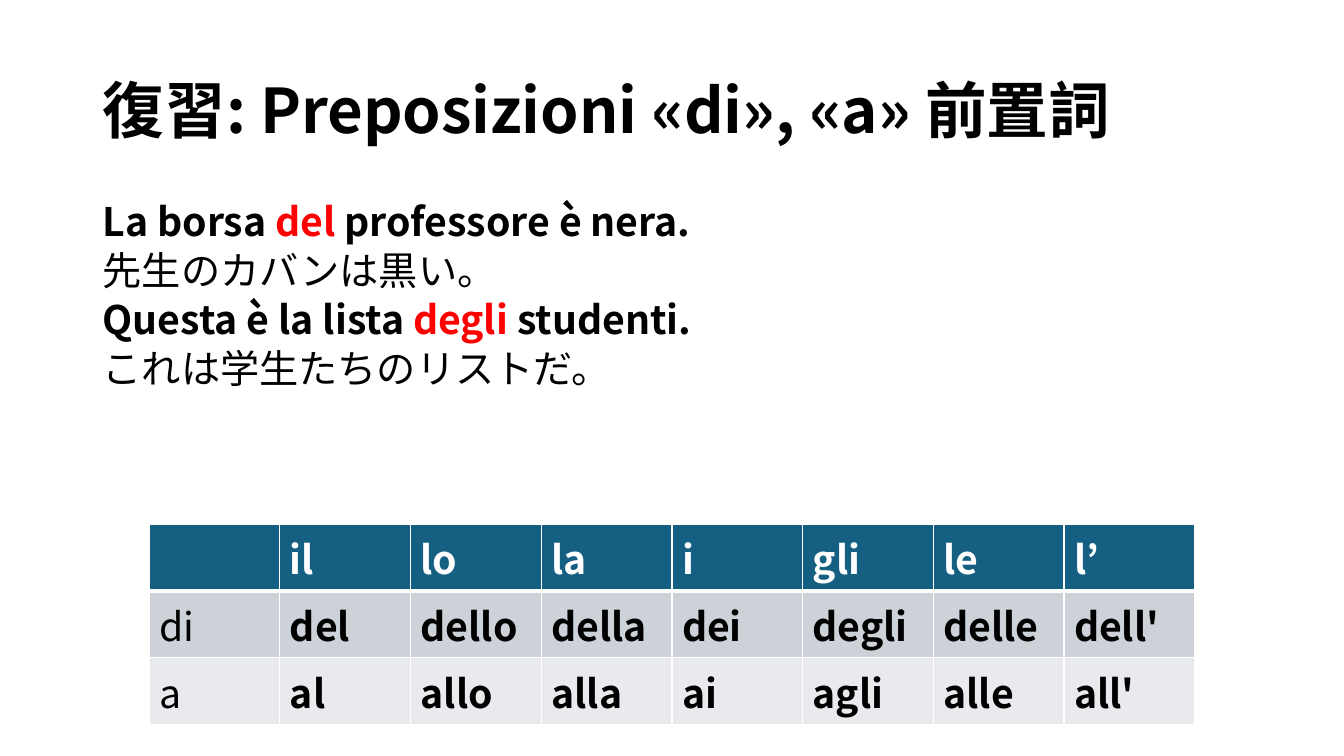
from dataclasses import dataclass

from lxml import etree
from pptx import Presentation, util as u
from pptx.dml.color import RGBColor
from pptx.enum import text as t
from pptx.oxml import ns

WIDE, HIGH = 13.33, 7.5


@dataclass(frozen=True)
class Theme:
    font: str = "Noto Sans CJK JP"
    ink: str = "000000"
    mark: str = "FF0000"
    white: str = "FFFFFF"
    head: str = "156082"
    bands: tuple = ("CCD2D8", "E8EAED")
    large: int = 44
    text: int = 28
    rule: int = 1
    thick: int = 3


class Deck:
    def __init__(self, theme):
        self.theme = theme
        self.file = Presentation()
        self.file.slide_width = u.Inches(WIDE)
        self.file.slide_height = u.Inches(HIGH)
        self.slide = self.file.slides.add_slide(self.file.slide_layouts[1])

    def area(self, left, top, wide, high):
        """Turn shares of the slide's size into lengths."""
        return [u.Inches(round(share * side, 2)) for share, side in
                zip((left, top, wide, high), (WIDE, HIGH, WIDE, HIGH))]

    def place(self, shape, area):
        shape.left, shape.top, shape.width, shape.height = self.area(*area)
        frame = shape.text_frame
        frame.word_wrap = True
        frame.auto_size = t.MSO_AUTO_SIZE.NONE
        return frame

    def style(self, run, size, color, bold):
        font = run.font
        font.size, font.bold = u.Pt(size), bold
        font.color.rgb = RGBColor.from_string(color)
        font.name = self.theme.font
        east = etree.SubElement(run._r.get_or_add_rPr(), ns.qn("a:ea"))
        east.set("typeface", self.theme.font)

    def title(self, words, area):
        frame = self.place(self.slide.shapes.title, area)
        frame.vertical_anchor = t.MSO_ANCHOR.MIDDLE
        frame.text = words
        para = frame.paragraphs[0]
        para.alignment = t.PP_ALIGN.LEFT
        para.line_spacing = 0.9
        self.style(para.runs[0], self.theme.large, self.theme.ink, True)

    def body(self, lines, area):
        """Write lines of (parts, bold); every second part is marked."""
        frame = self.place(self.slide.placeholders[1], area)
        frame.vertical_anchor = t.MSO_ANCHOR.TOP
        for i, (parts, bold) in enumerate(lines):
            para = frame.add_paragraph() if i else frame.paragraphs[0]
            props = para._p.get_or_add_pPr()
            props.set("marL", "0")
            props.set("indent", "0")
            etree.SubElement(props, ns.qn("a:buNone"))
            para.line_spacing = 0.8
            para.space_before = u.Pt(8 if i else 0)
            for j, part in enumerate(parts):
                run = para.add_run()
                run.text = part
                color = self.theme.mark if j % 2 else self.theme.ink
                self.style(run, self.theme.text, color, bold)

    def border(self, cell, low):
        props = cell._tc.get_or_add_tcPr()
        for i, side in enumerate("LRTB"):
            width = low if side == "B" else self.theme.rule
            line = etree.Element(ns.qn(f"a:ln{side}"), w=str(u.Pt(width)))
            fill = etree.SubElement(line, ns.qn("a:solidFill"))
            etree.SubElement(fill, ns.qn("a:srgbClr"), val=self.theme.white)
            props.insert(i, line)

    def table(self, rows, area):
        theme = self.theme
        grid = self.slide.shapes.add_table(
            len(rows), len(rows[0]), *self.area(*area)).table
        for r, row in enumerate(rows):
            for c, word in enumerate(row):
                cell = grid.cell(r, c)
                cell.fill.solid()
                fill = theme.bands[(r - 1) % 2] if r else theme.head
                cell.fill.fore_color.rgb = RGBColor.from_string(fill)
                self.border(cell, theme.rule if r else theme.thick)
                if word:
                    cell.text_frame.text = word
                    run = cell.text_frame.paragraphs[0].runs[0]
                    color = theme.ink if r else theme.white
                    self.style(run, theme.text, color, c > 0)


def main():
    deck = Deck(Theme())
    deck.title("復習: Preposizioni «di», «a» 前置詞",
               (0.069, 0.053, 0.863, 0.193))
    deck.body([
        (["La borsa ", "del ", "professore è nera."], True),
        (["先生のカバンは黒い。"], False),
        (["Questa è la lista ", "degli", " studenti."], True),
        (["これは学生たちのリストだ。"], False),
    ], (0.069, 0.267, 0.863, 0.635))
    deck.table([
        ["", "il", "lo", "la", "i", "gli", "le", "l’"],
        ["di", "del", "dello", "della", "dei", "degli", "delle", "dell'"],
        ["a", "al", "allo", "alla", "ai", "agli", "alle", "all'"],
    ], (0.111, 0.693, 0.778, 0.264))
    deck.file.save("out.pptx")


if __name__ == "__main__":
    main()
